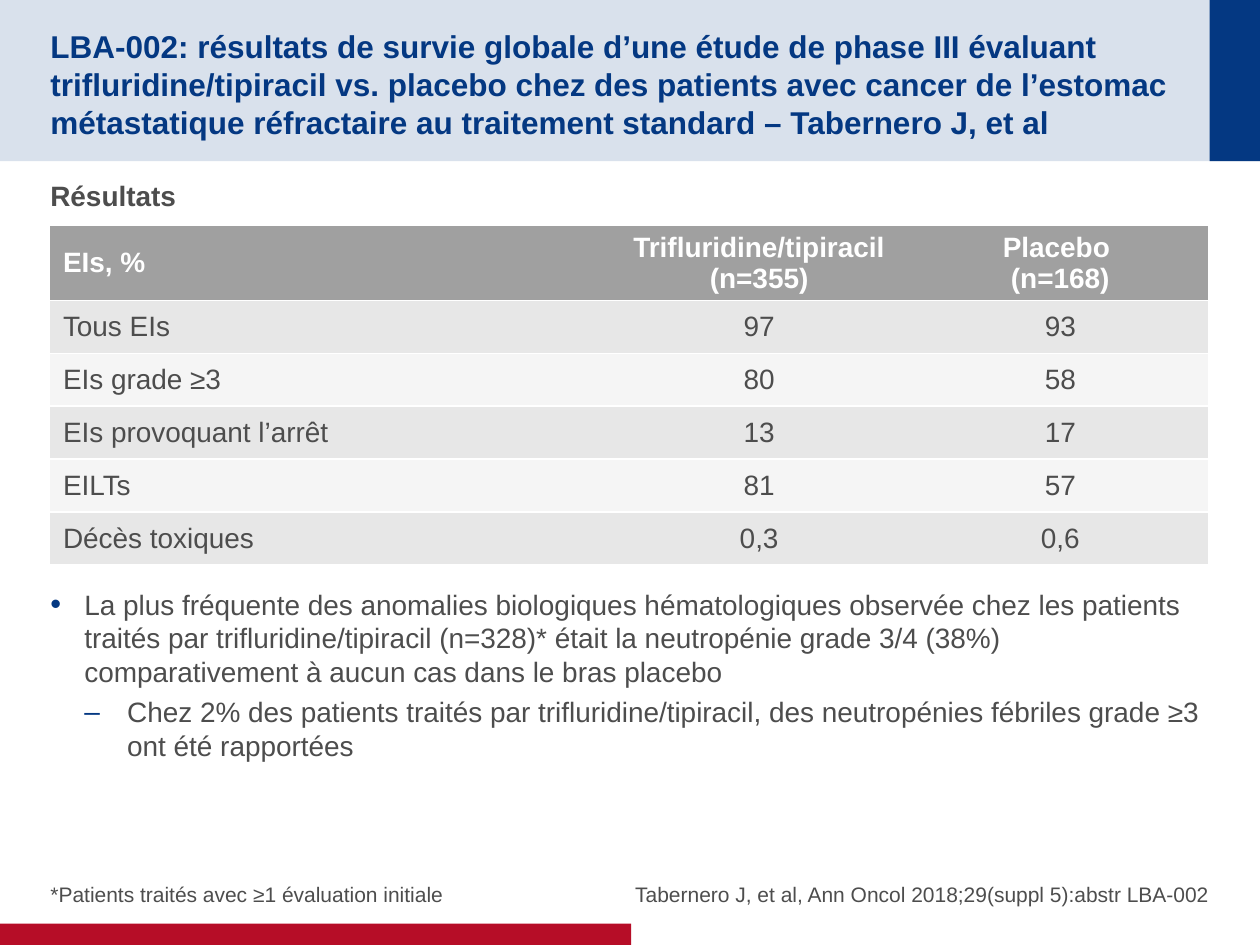
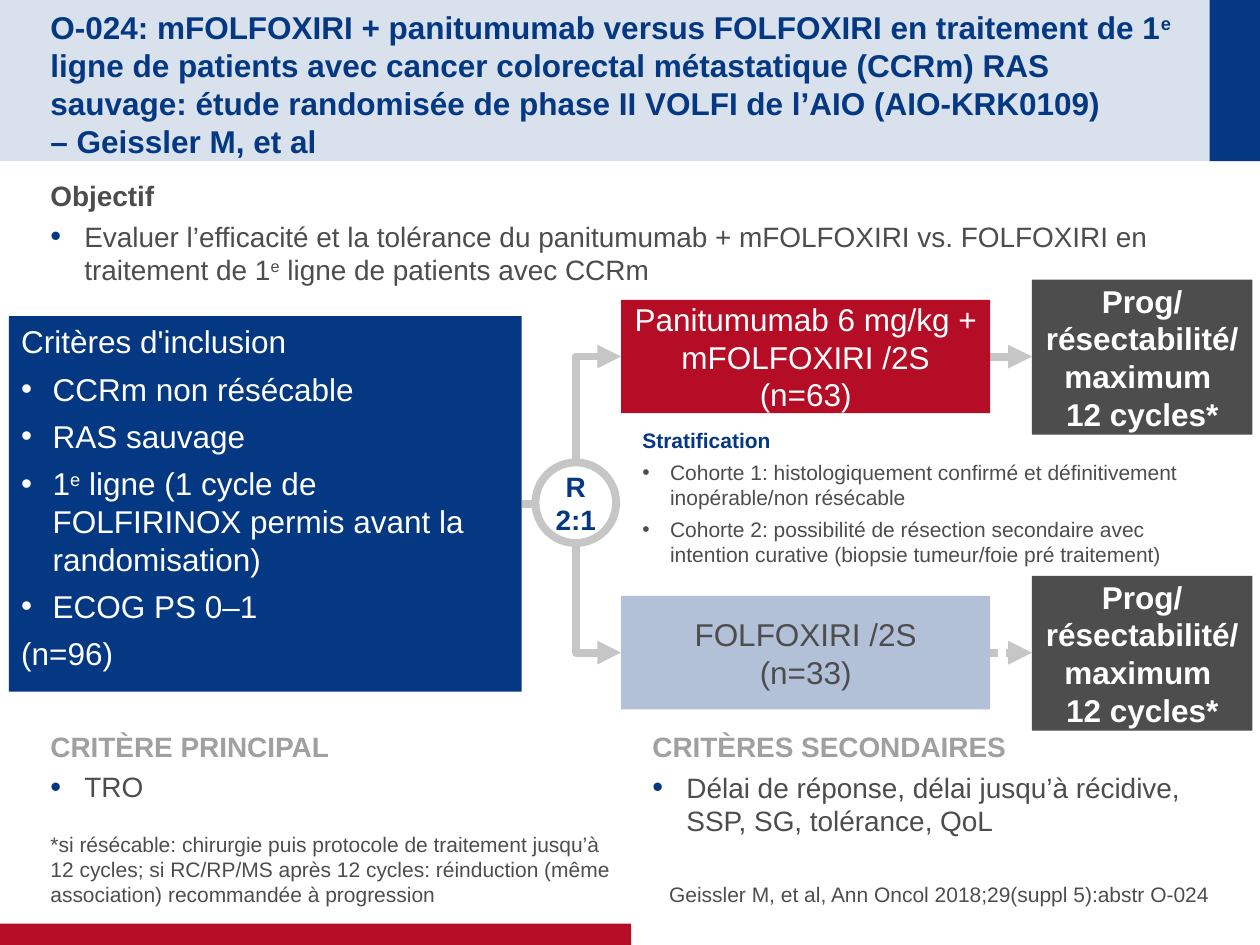
from lxml.etree import SubElement
from pptx import Presentation
from pptx.dml.color import RGBColor
from pptx.enum.dml import MSO_LINE
from pptx.enum.shapes import MSO_CONNECTOR, MSO_SHAPE
from pptx.enum.text import MSO_ANCHOR, MSO_AUTO_SIZE, PP_ALIGN
from pptx.oxml.ns import qn
from pptx.util import Inches, Pt

THEME = {
    "font": "Arial",
    "navy": RGBColor.from_string("043882"),
    "band": RGBColor.from_string("D9E1EC"),
    "red": RGBColor.from_string("B60D27"),
    "pale": RGBColor.from_string("B2C0D8"),
    "text": RGBColor.from_string("4D4D4D"),
    "grey": RGBColor.from_string("A0A0A0"),
    "row_dark": RGBColor.from_string("E7E7E7"),
    "row_light": RGBColor.from_string("F5F5F5"),
    "line": RGBColor.from_string("C6C6C6"),
    "white": RGBColor.from_string("FFFFFF"),
    "large": Pt(18), "body": Pt(16), "small": Pt(12),
}
LEFT, CENTER, RIGHT = PP_ALIGN.LEFT, PP_ALIGN.CENTER, PP_ALIGN.RIGHT
TOP, MIDDLE, BOTTOM = MSO_ANCHOR.TOP, MSO_ANCHOR.MIDDLE, MSO_ANCHOR.BOTTOM
BULLET = {"bullet": "•", "indent": 0.27, "bullet_color": "navy", "bullet_size": 110}
DASH = {"bullet": "–", "indent": 0.34, "margin": 0.61, "bullet_color": "navy"}
HEAD = {"bold": True}


def write(tf, paras, size="body", color="text", align=LEFT, after=4, anchor=TOP,
          ins=(0, 0.05, 0, 0.05), wrap=True):
    frame = {"word_wrap": wrap, "auto_size": MSO_AUTO_SIZE.NONE, "vertical_anchor": anchor}
    frame.update(zip(("margin_left", "margin_top", "margin_right", "margin_bottom"), map(Inches, ins)))
    for name, value in frame.items():
        setattr(tf, name, value)
    for i, (text, fmt) in enumerate(paras):
        p = tf.paragraphs[0] if i == 0 else tf.add_paragraph()
        p.alignment, p.space_after = align, Pt(after)
        if "bullet" in fmt:
            pPr = p._p.get_or_add_pPr()
            pPr.set("marL", str(Inches(fmt.get("margin", fmt["indent"]))))
            pPr.set("indent", str(-Inches(fmt["indent"])))
            if "bullet_color" in fmt:
                clr = SubElement(pPr, qn("a:buClr"))
                SubElement(clr, qn("a:srgbClr"), val=str(THEME[fmt["bullet_color"]]))
            if "bullet_size" in fmt:
                SubElement(pPr, qn("a:buSzPct"), val=str(fmt["bullet_size"] * 1000))
            SubElement(pPr, qn("a:buFont"), typeface=THEME["font"])
            SubElement(pPr, qn("a:buChar"), char=fmt["bullet"])
        for n, line in enumerate(text.split("\n")):
            if n:
                p.add_line_break()
            for j, part in enumerate(line.split("^")):
                if not part:
                    continue
                r = p.add_run()
                r.text = part
                font = {"name": THEME["font"], "size": THEME[size], "bold": fmt.get("bold", False)}
                for name, value in font.items():
                    setattr(r.font, name, value)
                r.font.color.rgb = THEME[fmt.get("color", color)]
                if j % 2:
                    r.font._element.set("baseline", "30000")


def add_box(slide, kind, at, fill=None, line=None):
    sp = slide.shapes.add_shape(kind, *map(Inches, at))
    sp.shadow.inherit = False
    if fill:
        sp.fill.solid()
        sp.fill.fore_color.rgb = THEME[fill]
    else:
        sp.fill.background()
    if line:
        sp.line.color.rgb = THEME[line]
        sp.line.width = Pt(4.5)
    else:
        sp.line.fill.background()
    return sp


prs = Presentation()
prs.slide_width, prs.slide_height = Inches(10), Inches(7.5)

pages = [
    ("LBA-002: résultats de survie globale d’une étude de phase III évaluant trifluridine/tipiracil "
     "vs. placebo chez des patients avec cancer de l’estomac métastatique réfractaire au traitement "
     "standard – Tabernero J, et al", 9.2,
     "*Patients traités avec ≥1 évaluation initiale",
     "Tabernero J, et al, Ann Oncol 2018;29(suppl 5):abstr LBA-002"),
    ("O-024: mFOLFOXIRI + panitumumab versus FOLFOXIRI en traitement de 1^e^ ligne de patients avec "
     "cancer colorectal métastatique (CCRm) RAS sauvage: étude randomisée de phase II VOLFI de l’AIO "
     "(AIO-KRK0109) \n– Geissler M, et al", 9.01,
     "*si résécable: chirurgie puis protocole de traitement jusqu’à 12 cycles; si RC/RP/MS après "
     "12 cycles: réinduction (même association) recommandée à progression",
     "Geissler M, et al, Ann Oncol 2018;29(suppl 5):abstr O-024"),
]
bands = [((0, 0, 10, 1.28), "band"), ((9.6, 0, 0.4, 1.28), "navy"), ((0, 7.33, 5.01, 0.17), "red")]

for title, width, note, source in pages:
    slide = prs.slides.add_slide(prs.slide_layouts[5])
    for at, fill in bands:
        add_box(slide, MSO_SHAPE.RECTANGLE, at, fill)
    sp = slide.shapes.title
    slide.shapes._spTree.append(sp._element)
    sp.left, sp.top, sp.width, sp.height = map(Inches, (0.4, 0.2, width, 0.88))
    write(sp.text_frame, [(title, HEAD)], "large", "navy", after=0, anchor=MIDDLE, ins=(0, 0.05, 0, 0))
    for text, x, w, align in [(note, 0.4, 4.52, LEFT), (source, 4.83, 4.77, RIGHT)]:
        tb = slide.shapes.add_textbox(*map(Inches, (x, 6.67, w, 0.53)))
        write(tb.text_frame, [(text, {})], "small", align=align, anchor=BOTTOM, ins=(0, 0, 0, 0))

results, design = prs.slides

texts = [
    (results, (0.4, 1.37, 9.2, 0.4), 0, [("Résultats", HEAD)]),
    (results, (0.4, 4.61, 9.2, 1.95), 0, [
        ("La plus fréquente des anomalies biologiques hématologiques observée chez les patients traités "
         "par trifluridine/tipiracil (n=328)* était la neutropénie grade 3/4 (38%) comparativement à "
         "aucun cas dans le bras placebo", BULLET),
        ("Chez 2% des patients traités par trifluridine/tipiracil, des neutropénies fébriles grade ≥3 "
         "ont été rapportées", DASH)]),
    (design, (0.4, 1.37, 9.2, 1), 0, [
        ("Objectif", HEAD),
        ("Evaluer l’efficacité et la tolérance du panitumumab + mFOLFOXIRI vs. FOLFOXIRI en traitement "
         "de 1^e^ ligne de patients avec CCRm", BULLET)]),
    (design, (0.4, 5.74, 4.52, 0.73), 0, [
        ("CRITÈRE PRINCIPAL", {"bold": True, "color": "grey"}), ("TRO", BULLET)]),
    (design, (5.08, 5.74, 4.86, 1.09), 0.1, [
        ("CRITÈRES SECONDAIRES", {"bold": True, "color": "grey"}),
        ("Délai de réponse, délai jusqu’à récidive, SSP, SG, tolérance, QoL", BULLET)]),
]
for slide, at, side, paras in texts:
    tb = slide.shapes.add_textbox(*map(Inches, at))
    write(tb.text_frame, paras, ins=(side, 0.05, side, 0.05))

rows = [
    ("EIs, %", "Trifluridine/tipiracil (n=355)", "Placebo \n(n=168)"),
    ("Tous EIs", "97", "93"),
    ("EIs grade ≥3", "80", "58"),
    ("EIs provoquant l’arrêt", "13", "17"),
    ("EILTs", "81", "57"),
    ("Décès toxiques", "0,3", "0,6"),
]
tbl = results.shapes.add_table(len(rows), 3, *map(Inches, (0.4, 1.79, 9.19, 2.69))).table
tbl.horz_banding = False
tbl._tbl.tblPr.find(qn("a:tableStyleId")).text = "{2D5ABB26-0587-4C30-8999-92F81FD0307C}"
for col, w in zip(tbl.columns, (4.41, 2.43, 2.35)):
    col.width = Inches(w)
for i, row in enumerate(rows):
    tbl.rows[i].height = Inches(0.42 if i else 0.59)
    for j, text in enumerate(row):
        cell = tbl.cell(i, j)
        write(cell.text_frame, [(text, {"bold": i == 0})], color="text" if i else "white",
              align=CENTER if j else LEFT, after=0)
        cell.vertical_anchor = MIDDLE
        cell.margin_left = cell.margin_right = Inches(0.1)
        ln = SubElement(cell._tc.get_or_add_tcPr(), qn("a:lnB"), w=str(Pt(1)))
        SubElement(SubElement(ln, qn("a:solidFill")), qn("a:srgbClr"), val=str(THEME["white"]))
        cell.fill.solid()
        cell.fill.fore_color.rgb = THEME["grey" if i == 0 else "row_dark" if i % 2 else "row_light"]

ELBOW, STRAIGHT = MSO_CONNECTOR.ELBOW, MSO_CONNECTOR.STRAIGHT
links = [
    (ELBOW, (4.93, 2.83, 4.57, 3.67), "headEnd", None),
    (ELBOW, (4.93, 5.18, 4.57, 4.31), "headEnd", None),
    (STRAIGHT, (4.14, 4, 4.25, 4), None, None),
    (STRAIGHT, (7.86, 2.83, 8.19, 2.83), "tailEnd", None),
    (STRAIGHT, (7.86, 5.18, 8.19, 5.18), "tailEnd", MSO_LINE.ROUND_DOT),
]
for kind, ends, arrow, dash in links:
    cxn = design.shapes.add_connector(kind, *map(Inches, ends))
    cxn.line.color.rgb = THEME["line"]
    cxn.line.width = Pt(4.5)
    if dash:
        cxn.line.dash_style = dash
    if arrow:
        SubElement(cxn.line._get_or_add_ln(), qn("a:" + arrow), type="triangle")
    spPr = cxn._element.spPr
    if kind == ELBOW:
        spPr.find(qn("a:prstGeom")).set("prst", "bentConnector2")
    SubElement(spPr, qn("a:effectLst"))

sp = add_box(design, MSO_SHAPE.OVAL, (4.25, 3.67, 0.64, 0.64), line="line")
write(sp.text_frame, [("R", HEAD), ("2:1", HEAD)], color="navy", align=CENTER, after=0,
      anchor=MIDDLE, wrap=False)

arms = [
    (2.83, "red", "white", ["Panitumumab 6 mg/kg + mFOLFOXIRI /2S", "(n=63)"]),
    (5.18, "pale", "text", ["FOLFOXIRI /2S", "(n=33)"]),
]
for mid, fill, color, lines in arms:
    boxes = [
        ((4.93, mid - 0.45, 2.93, 0.9), fill, color, [(t, {}) for t in lines]),
        ((8.19, mid - 0.61, 1.75, 1.23), "text", "white",
         [("Prog/\nrésectabilité/maximum \n12 cycles*", HEAD)]),
    ]
    for at, back, ink, paras in boxes:
        sp = add_box(design, MSO_SHAPE.RECTANGLE, at, back)
        write(sp.text_frame, paras, "large", ink, CENTER, 0, MIDDLE, (0.1, 0, 0.1, 0))

item = {"bullet": "•", "indent": 0.25}
sp = add_box(design, MSO_SHAPE.RECTANGLE, (0.07, 2.51, 4.07, 2.98), "navy")
write(sp.text_frame, [
    ("Critères d'inclusion", {}),
    ("CCRm non résécable", item),
    ("RAS sauvage", item),
    ("1^e^ ligne (1 cycle de FOLFIRINOX permis avant la randomisation)", item),
    ("ECOG PS 0–1", item),
    ("(n=96)", {}),
], "large", "white", after=5.4, ins=(0.1, 0.05, 0.1, 0.05))

cohort = {"bullet": "•", "indent": 0.22}
tb = design.shapes.add_textbox(*map(Inches, (5, 3.34, 4.8, 1.49)))
write(tb.text_frame, [
    ("Stratification", {"bold": True, "color": "navy"}),
    ("Cohorte 1: histologiquement confirmé et définitivement inopérable/non résécable", cohort),
    ("Cohorte 2: possibilité de résection secondaire avec intention curative (biopsie tumeur/foie pré "
     "traitement)", cohort),
], "small", ins=(0.1, 0.05, 0.1, 0.05))

prs.save("out.pptx")
